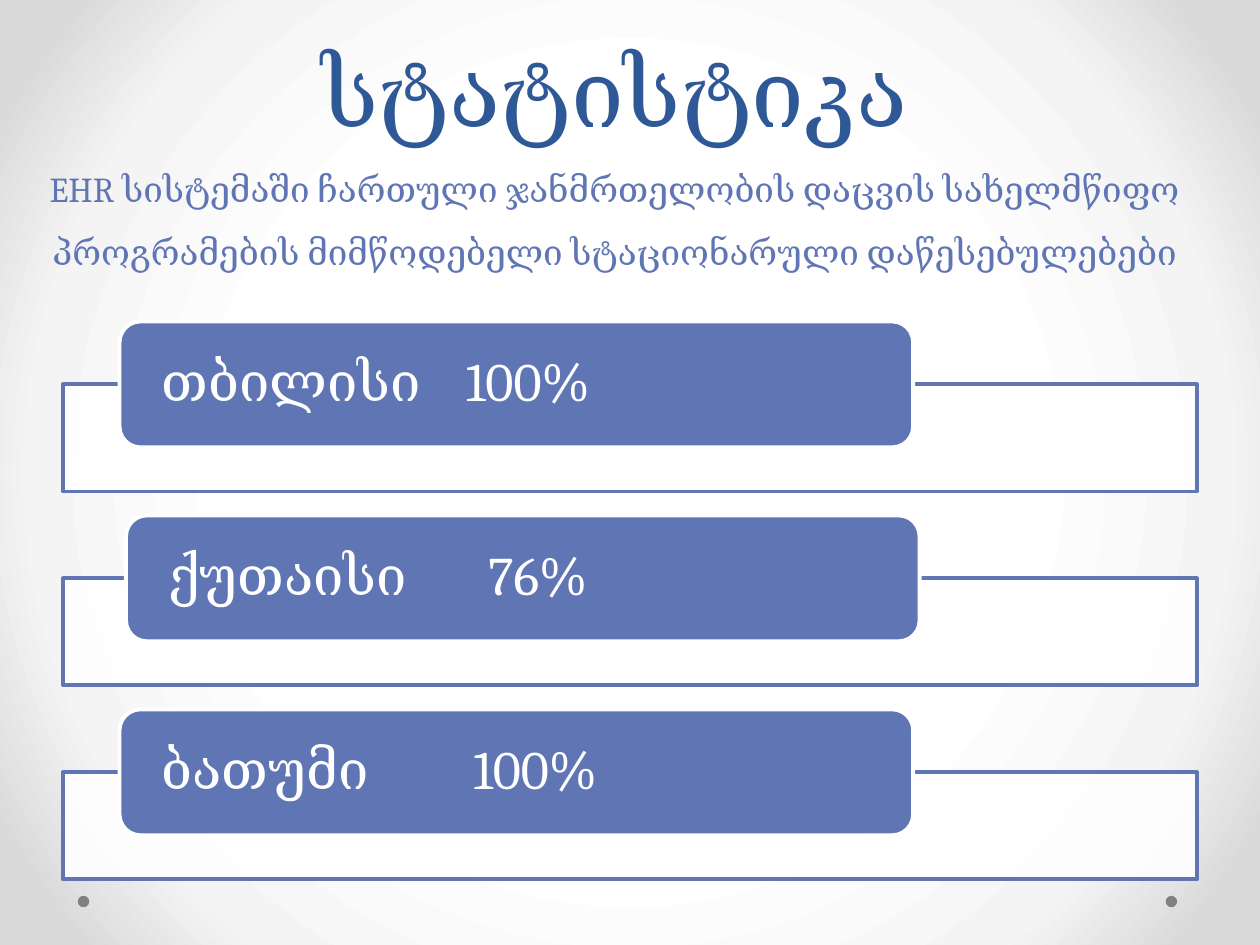
from lxml import etree
from pptx import Presentation
from pptx.dml.color import RGBColor
from pptx.enum.shapes import MSO_SHAPE
from pptx.enum.text import MSO_ANCHOR, MSO_AUTO_SIZE, PP_ALIGN
from pptx.oxml.ns import qn
from pptx.util import Cm, Pt

RECT, ROUND, OVAL = MSO_SHAPE.RECTANGLE, MSO_SHAPE.ROUNDED_RECTANGLE, MSO_SHAPE.OVAL
LEFT, CENTER = PP_ALIGN.LEFT, PP_ALIGN.CENTER
MIDDLE, BOTTOM = MSO_ANCHOR.MIDDLE, MSO_ANCHOR.BOTTOM
NO_FIT = MSO_AUTO_SIZE.NONE

HEAD = "სტატისტიკა"
SUB = ("EHR სისტემაში ჩართული ჯანმრთელობის დაცვის სახელმწიფო "
       "პროგრამების მიმწოდებელი სტაციონარული დაწესებულებები")
# City, share, left edge of the label and tab stop of the share, in cm
ROWS = [
    ("თბილისი", "100%", 2.41, 6.13),
    ("ქუთაისი", "76%", 2.54, 6.45),
    ("ბათუმი", "100%", 2.41, 6.28),
]
COLORS = {"head": "2F5897", "blue": "6076B4", "white": "FFFFFF", "dot": "808080"}
GLOW = [(50, "FFFFFF"), (76, "F4F4F4"), (92, "DADADA")]
FONT = "Cambria"
TOP, STEP = 7.75, 3.91


def rgb(name):
    return RGBColor.from_string(COLORS[name])


def style(run, size, color):
    run.font.name = FONT
    run.font.size = Pt(size)
    run.font.color.rgb = rgb(color)


def add_box(slide, kind, place, fill, line=None):
    box = slide.shapes.add_shape(kind, *map(Cm, place))
    box.shadow.inherit = False
    box.fill.solid()
    box.fill.fore_color.rgb = rgb(fill)
    if line:
        box.line.color.rgb = rgb(line)
        box.line.width = Pt(2.25)
    else:
        box.line.fill.background()
    return box


def set_glow(slide):
    """Swap the plain background for a circular gradient."""
    slide.background.fill.solid()
    solid = slide.element.find(".//" + qn("p:bgPr")).find(qn("a:solidFill"))
    grad = etree.Element(qn("a:gradFill"), rotWithShape="1")
    stops = etree.SubElement(grad, qn("a:gsLst"))
    for pos, color in GLOW:
        stop = etree.SubElement(stops, qn("a:gs"), pos=str(pos * 1000))
        etree.SubElement(stop, qn("a:srgbClr"), val=color)
    ring = etree.SubElement(grad, qn("a:path"), path="circle")
    etree.SubElement(ring, qn("a:fillToRect"), l="50000", t="50000", r="50000", b="50000")
    solid.getparent().replace(solid, grad)


def add_title(slide):
    title = slide.shapes.title
    title.left, title.top, title.width, title.height = map(Cm, (0.64, 2.01, 23.5, 3.61))
    frame = title.text_frame
    frame.text = HEAD + "\v" + SUB
    frame.auto_size = NO_FIT
    frame.vertical_anchor = BOTTOM
    para = frame.paragraphs[0]
    para.alignment = CENTER
    para.line_spacing = 1.5
    for run, size, color in zip(para.runs, (54, 20), ("head", "blue")):
        style(run, size, color)


def add_row(slide, top, city, share, left, stop):
    back = add_box(slide, RECT, (1.27, top, 22.86, 2.16), "white", "blue")
    tone = back.fill._xPr.find(qn("a:solidFill"))[0]
    etree.SubElement(tone, qn("a:alpha"), val="90000")

    label = add_box(slide, ROUND, (left, top - 1.27, 16, 2.54), "blue", "white")
    frame = label.text_frame
    frame.text = city + "\t" + share
    frame.word_wrap = True
    frame.vertical_anchor = MIDDLE
    frame.margin_left = frame.margin_right = Cm(0.73)
    frame.margin_top = frame.margin_bottom = 0
    para = frame.paragraphs[0]
    para.alignment = LEFT
    para.line_spacing = 0.9
    tabs = etree.SubElement(para._p.get_or_add_pPr(), qn("a:tabLst"))
    etree.SubElement(tabs, qn("a:tab"), pos=str(Cm(stop)), algn="l")
    for run in para.runs:
        style(run, 31, "white")


def main():
    deck = Presentation()
    deck.slide_width, deck.slide_height = Cm(25.4), Cm(19.05)
    slide = deck.slides.add_slide(deck.slide_layouts[5])
    set_glow(slide)
    for left in (23.5, 1.57):
        add_box(slide, OVAL, (left, 18.06, 0.23, 0.23), "dot")
    add_title(slide)
    for i, row in enumerate(ROWS):
        add_row(slide, TOP + i * STEP, *row)
    deck.save("out.pptx")


if __name__ == "__main__":
    main()
